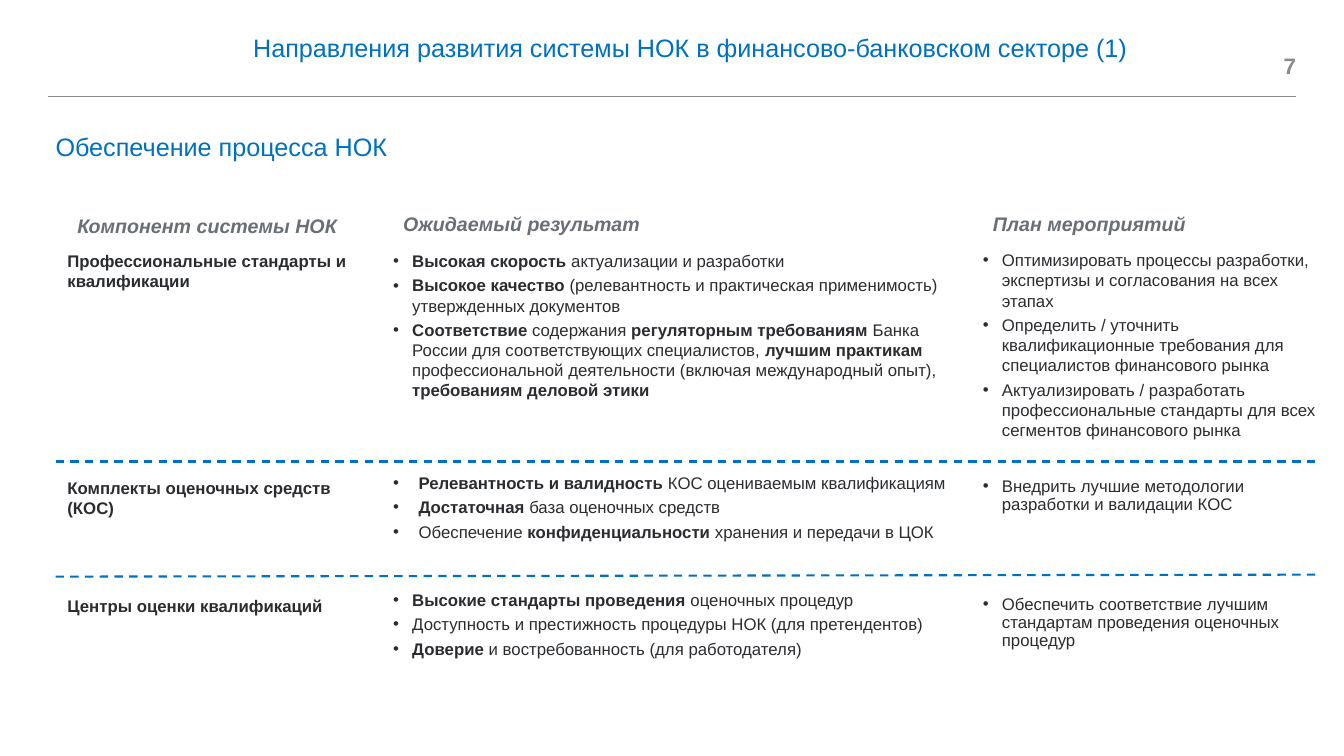
from dataclasses import dataclass

from lxml.etree import SubElement
from pptx import Presentation
from pptx.dml.color import RGBColor
from pptx.enum.dml import MSO_LINE_DASH_STYLE as Dash
from pptx.enum.shapes import MSO_CONNECTOR as Connector
from pptx.enum.text import MSO_ANCHOR as Anchor, MSO_AUTO_SIZE as AutoSize, PP_ALIGN as Align
from pptx.oxml.ns import qn
from pptx.slide import Slide
from pptx.util import Cm, Pt


@dataclass(frozen=True)
class Theme:
    font: str = "Arial"
    accent: str = "0070C0"
    body: str = "2A2C2F"
    heading: str = "686F76"
    muted: str = "888A8D"
    title_size: int = 18
    number_size: int = 16
    heading_size: int = 14
    body_size: int = 12


@dataclass(frozen=True)
class Column:
    heading: str
    left: float
    width: float
    heading_top: float
    heading_width: float


@dataclass(frozen=True)
class Component:
    """One band of the slide; ** switches bold on and off in the results."""
    name: str
    results: list[str]
    measures: list[str]
    tops: tuple[float, float, float]
    heights: tuple[float, float, float]
    result_indent: float = 0.48
    measure_spacing: float = 1.0


THEME = Theme()

COLUMNS = [
    Column("Компонент системы НОК", 1.7, 7.92, 5.26, 10.59),
    Column("Ожидаемый результат", 9.91, 14.53, 5.21, 10.59),
    Column("План мероприятий", 24.77, 8.79, 5.21, 5.61),
]

COMPONENTS = [
    Component(
        "Профессиональные стандарты и квалификации",
        ["**Высокая скорость **актуализации и разработки",
         "**Высокое качество **(релевантность и практическая применимость) "
         "утвержденных документов",
         "**Соответствие **содержания** регуляторным требованиям **Банка России "
         "для соответствующих специалистов, **лучшим практикам **профессиональной "
         "деятельности (включая международный опыт), **требованиям деловой этики**"],
        ["Оптимизировать процессы разработки, экспертизы и согласования на всех этапах",
         "Определить / уточнить квалификационные требования для специалистов "
         "финансового рынка",
         "Актуализировать / разработать профессиональные стандарты для всех "
         "сегментов финансового рынка"],
        tops=(6.32, 6.32, 6.3), heights=(1.55, 4.65, 4.27)),
    Component(
        "Комплекты оценочных средств (КОС)",
        ["**Релевантность и валидность **КОС оцениваемым квалификациям",
         "**Достаточная** база оценочных средств",
         "Обеспечение **конфиденциальности** хранения и передачи в ЦОК"],
        ["Внедрить лучшие методологии разработки и валидации КОС"],
        tops=(12.04, 11.91, 12.04), heights=(1.63, 2.18, 1.63),
        result_indent=0.64, measure_spacing=0.9),
    Component(
        "Центры оценки квалификаций",
        ["**Высокие стандарты проведения **оценочных процедур",
         "Доступность и престижность процедуры НОК (для претендентов)",
         "**Доверие** и востребованность (для работодателя)"],
        ["Обеспечить соответствие лучшим стандартам проведения оценочных процедур"],
        tops=(15.01, 14.86, 15.01), heights=(1.63, 1.96, 1.63),
        measure_spacing=0.9),
]


def add_text(slide: Slide, paragraphs: list[str], left: float, top: float,
             width: float, height: float, *, size: int = THEME.body_size,
             color: str = THEME.body, bold: bool = False, italic: bool = False,
             align: Align = Align.LEFT, anchor: Anchor = Anchor.TOP,
             bullet_indent: float = 0, line_spacing: float = 1.0,
             inset: tuple[float, float] = (0, 0), grow: bool = False) -> None:
    frame = slide.shapes.add_textbox(Cm(left), Cm(top), Cm(width), Cm(height)).text_frame
    frame.word_wrap = True
    frame.auto_size = AutoSize.SHAPE_TO_FIT_TEXT if grow else AutoSize.NONE
    frame.vertical_anchor = anchor
    frame.margin_left = frame.margin_right = Cm(inset[0])
    frame.margin_top = frame.margin_bottom = Cm(inset[1])
    for index, text in enumerate(paragraphs):
        paragraph = frame.add_paragraph() if index else frame.paragraphs[0]
        paragraph.alignment = align
        paragraph.line_spacing = line_spacing
        if index:
            paragraph.space_before = Pt(3)
        if bullet_indent:
            properties = paragraph._p.get_or_add_pPr()
            properties.set("marL", str(Cm(bullet_indent)))
            properties.set("indent", str(-Cm(bullet_indent)))
            SubElement(properties, qn("a:buFont"), typeface=THEME.font)
            SubElement(properties, qn("a:buChar"), char="•")
        for part, words in enumerate(text.split("**")):
            if not words:
                continue
            run = paragraph.add_run()
            run.text = words
            run.font.name = THEME.font
            run.font.size = Pt(size)
            run.font.bold = bold or part % 2 == 1
            run.font.italic = italic
            run.font.color.rgb = RGBColor.from_string(color)


def add_rule(slide: Slide, start: tuple[float, float], end: tuple[float, float],
             color: str, weight: float, dashed: bool = False) -> None:
    rule = slide.shapes.add_connector(
        Connector.STRAIGHT, Cm(start[0]), Cm(start[1]), Cm(end[0]), Cm(end[1]))
    rule.line.color.rgb = RGBColor.from_string(color)
    rule.line.width = Pt(weight)
    if dashed:
        rule.line.dash_style = Dash.DASH
    SubElement(rule._element.spPr, qn("a:effectLst"))


def add_component(slide: Slide, component: Component) -> None:
    formats = [
        dict(bold=True),
        dict(bullet_indent=component.result_indent),
        dict(bullet_indent=0.48, line_spacing=component.measure_spacing),
    ]
    cells = [[component.name], component.results, component.measures]
    for column, cell, top, height, style in zip(
            COLUMNS, cells, component.tops, component.heights, formats):
        add_text(slide, cell, column.left, top, column.width, height, **style)


def main() -> None:
    deck = Presentation()
    deck.slide_width, deck.slide_height = Cm(33.87), Cm(19.05)
    slide = deck.slides.add_slide(deck.slide_layouts[6])

    # Header: rule, page number, title and subtitle
    add_rule(slide, (1.2, 2.42), (32.66, 2.42), THEME.muted, 0.5)
    add_text(slide, ["7"], 30.6, 1.2, 2.06, 0.89, size=THEME.number_size,
             color=THEME.muted, bold=True, align=Align.RIGHT, anchor=Anchor.MIDDLE)
    add_text(slide, ["Направления развития системы НОК в финансово-банковском секторе (1)"],
             6.38, 0.91, 22.96, 1.32, size=THEME.title_size, color=THEME.accent,
             line_spacing=0.9)
    add_text(slide, ["Обеспечение процесса НОК"], 1.4, 3.3, 10.46, 1.55,
             size=THEME.title_size, color=THEME.accent)

    # Column headings
    for column in COLUMNS:
        add_text(slide, [column.heading], column.left, column.heading_top,
                 column.heading_width, 0.86, size=THEME.heading_size,
                 color=THEME.heading, bold=True, italic=True,
                 inset=(0.25, 0.13), grow=True)

    # Components and the dashed dividers between them
    for component in COMPONENTS:
        add_component(slide, component)
    for left_y, right_y in [(11.63, 11.63), (14.53, 14.48)]:
        add_rule(slide, (1.4, left_y), (33.2, right_y), THEME.accent, 1.5, dashed=True)

    deck.save("out.pptx")


if __name__ == "__main__":
    main()
